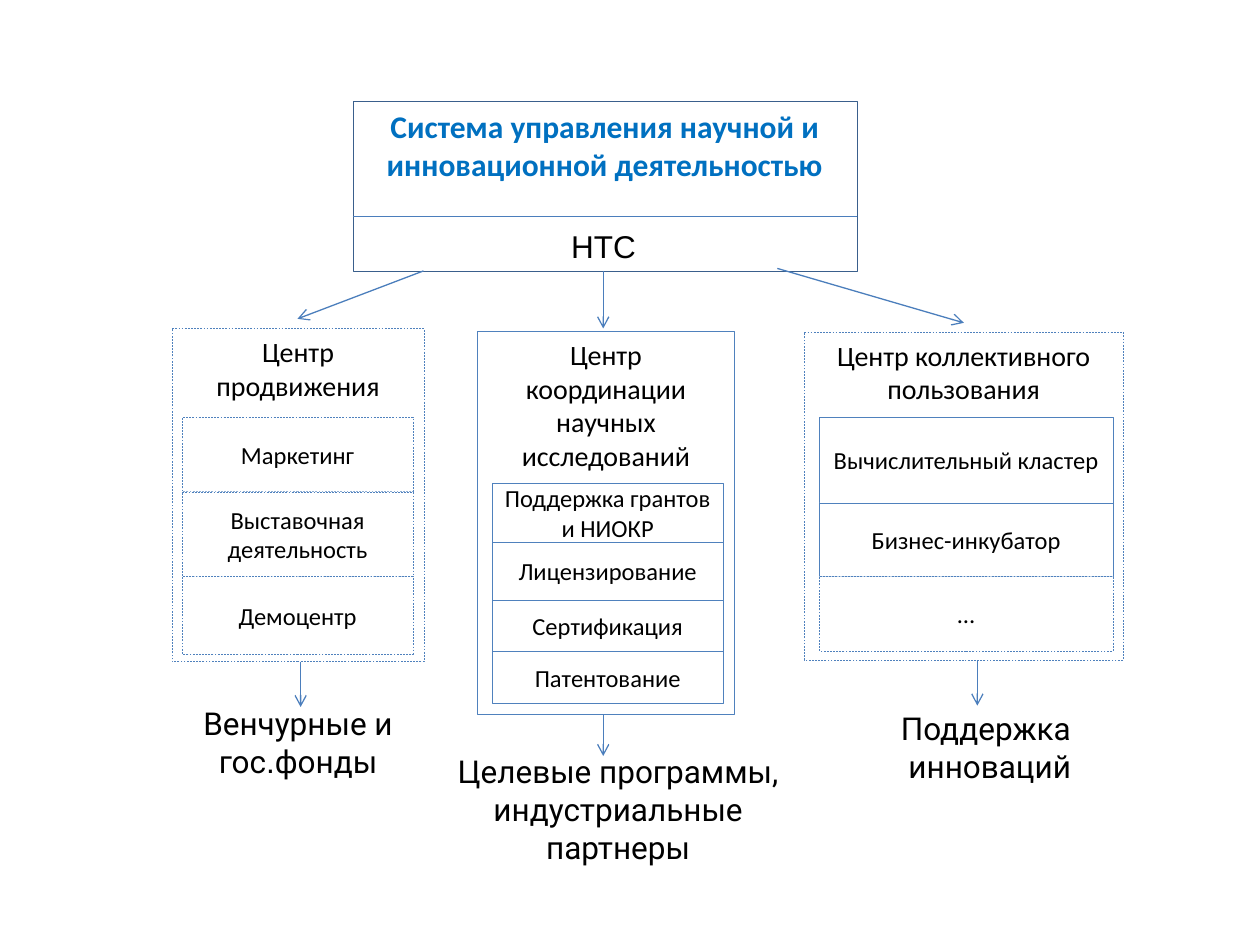
import lxml.etree
import pptx
import pptx.dml.color
import pptx.enum.dml
import pptx.enum.shapes
import pptx.enum.text
import pptx.oxml.ns
import pptx.util

Pt = pptx.util.Pt
qn = pptx.oxml.ns.qn
ANCHOR = pptx.enum.text.MSO_ANCHOR
FIT = pptx.enum.text.MSO_AUTO_SIZE

BLACK, WHITE, BLUE = "000000", "FFFFFF", "0070C0"
EDGE, FRAME, ARROW = "4F81BD", "3A5F8C", "4B7EBC"

HEAD = {"size": Pt(18), "name": "Calibri", "bold": True}
NAME = {"size": Pt(16), "name": "Calibri"}
ITEM = {"size": Pt(14), "name": "Calibri"}
BOARD = {"size": Pt(18), "name": "Arial"}
GOAL = {"size": Pt(18), "name": "Roboto"}


def color(code):
    return pptx.dml.color.RGBColor.from_string(code)


def apply(target, style):
    for key, value in style.items():
        setattr(target, key, value)


def write(shape, runs, style, ink=BLACK, anchor=ANCHOR.TOP, fit=FIT.NONE):
    """Fill a shape with centred text; runs are (text, changed format) pairs."""
    frame = shape.text_frame
    apply(frame, {"word_wrap": True, "auto_size": fit, "vertical_anchor": anchor})
    para = frame.paragraphs[0]
    para.alignment = pptx.enum.text.PP_ALIGN.CENTER
    for text, change in runs:
        for index, line in enumerate(text.split("\n")):
            if index:
                para.add_line_break()
            run = para.add_run()
            run.text = line
            apply(run.font, {**style, **change})
            run.font.color.rgb = color(ink)


def outline(shape, code, width, dash=False):
    shape.line.color.rgb = color(code)
    shape.line.width = Pt(width)
    if dash:
        shape.line.dash_style = pptx.enum.dml.MSO_LINE.DASH


def frame(slide, box, text, style, anchor, dash):
    shape = slide.shapes.add_shape(
        pptx.enum.shapes.MSO_SHAPE.RECTANGLE, *map(Pt, box))
    shape.shadow.inherit = False
    shape.fill.solid()
    shape.fill.fore_color.rgb = color(WHITE)
    outline(shape, EDGE, 0.25, dash)
    write(shape, [(text, {})], style, anchor=anchor)


def label(slide, box, runs, style):
    shape = slide.shapes.add_textbox(*map(Pt, box))
    write(shape, runs, style, fit=FIT.SHAPE_TO_FIT_TEXT)


def link(slide, start, end, head=True):
    line = slide.shapes.add_connector(
        pptx.enum.shapes.MSO_CONNECTOR.STRAIGHT, *map(Pt, start + end))
    outline(line, ARROW, 0.75)
    if head:
        lxml.etree.SubElement(line.line._get_or_add_ln(), qn("a:tailEnd"), type="arrow")
    lxml.etree.SubElement(line._element.spPr, qn("a:effectLst"))


def header(slide, box):
    """Title frame with the council's name below a dividing line."""
    left, top, width, height = box
    title = slide.shapes.title
    apply(title, dict(zip(("left", "top", "width", "height"), map(Pt, box))))
    outline(title, FRAME, 0.25)
    write(title, [("Система управления научной и инновационной деятельностью", {})],
          HEAD, BLUE)
    split = top + 66.3
    link(slide, (left, split), (left + width, split), head=False)
    label(slide, (left + 107.3, split + 2, 72, 29), [("НТС", {})], BOARD)


def center(slide, box, name, inset, width, rows, dash, exit):
    """Framed centre with stacked rows and an arrow leaving its lower edge."""
    left, top, _, height = box
    frame(slide, box, name, NAME, ANCHOR.TOP, dash)
    x, y = left + inset[0], top + inset[1]
    for text, tall, dotted in rows:
        frame(slide, (x, y, width, tall), text, ITEM, ANCHOR.MIDDLE, dotted)
        y += tall
    across, down = exit
    base = top + height
    link(slide, (left + across, base), (left + across, base + down))


def main():
    deck = pptx.Presentation()
    deck.slide_width, deck.slide_height = Pt(720), Pt(540)
    slide = deck.slides.add_slide(deck.slide_layouts[5])

    header(slide, (201.6, 57.6, 288, 97.2))
    for start, end in (((242, 154.8), (170, 182.2)),
                       ((344.7, 154.8), (344.7, 187.7)),
                       ((444.2, 153.4), (550.8, 184.5))):
        link(slide, start, end)

    center(slide, (98.2, 187.8, 144.2, 190.2), "Центр продвижения", (6, 50.6), 131.8,
           [("Маркетинг", 42.6, True),
            ("Выставочная деятельность", 48.4, True),
            ("Демоцентр", 44.4, True)],
           True, (73.6, 26))
    center(slide, (272.8, 189.4, 147, 218.8),
           "Центр координации научных исследований", (8.6, 86.8), 131.8,
           [("Поддержка грантов и НИОКР", 33.6, False),
            ("Лицензирование", 33.2, False),
            ("Сертификация", 29.2, False),
            ("Патентование", 29.8, False)],
           False, (71.9, 23.8))
    center(slide, (459.6, 189.8, 182.2, 187.4),
           "Центр коллективного пользования", (8.6, 48.6), 167.8,
           [("Вычислительный кластер", 49, False),
            ("Бизнес-инкубатор", 42, False),
            ("…", 42.6, True)],
           True, (98.9, 26))

    label(slide, (107.3, 398.9, 126, 51),
          [("Венчурные и гос", {}), (".", {"name": "Arial"}), ("фонды", {})], GOAL)
    label(slide, (247, 426.2, 212.4, 72.7),
          [("Целевые программы, индустриальные партнеры", {})], GOAL)
    label(slide, (459.4, 401.8, 212.4, 51), [("Поддержка \nинноваций", {})], GOAL)
    deck.save("out.pptx")


if __name__ == "__main__":
    main()
